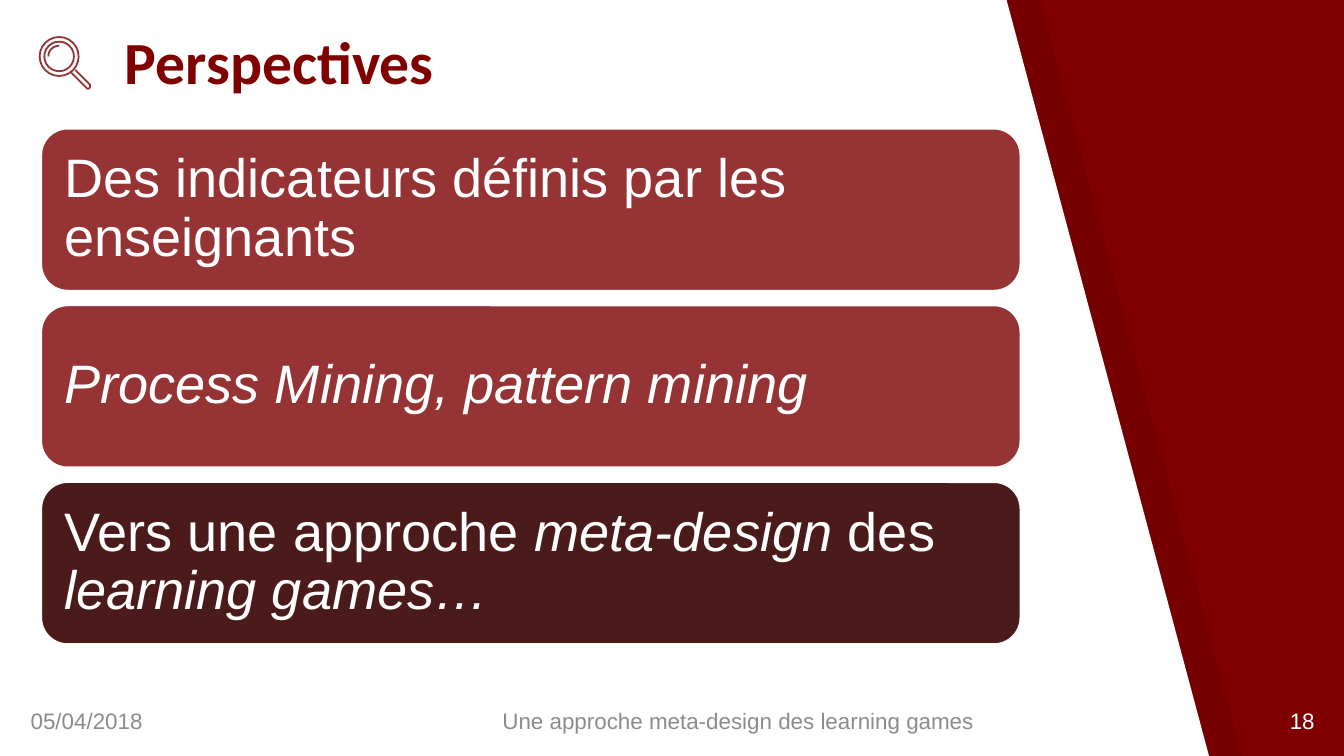
import math

import pptx
import pptx.dml.color
import pptx.enum.shapes
import pptx.enum.text
import pptx.oxml
import pptx.oxml.ns
import pptx.util

Inches = pptx.util.Inches
SHAPES = pptx.enum.shapes.MSO_SHAPE
ANCHOR = pptx.enum.text.MSO_ANCHOR
ALIGN = pptx.enum.text.PP_ALIGN

COLORS = {
    "maroon": "800000",
    "brick": "963334",
    "dark": "4B1A1A",
    "white": "FFFFFF",
    "grey": "8C8C8C",
    "black": "000000",
}

# Content: a run is (text, italic)
TITLE = "Perspectives"
PANELS = [
    ([("Des indicateurs définis par les enseignants", False)], "brick"),
    ([("Process Mining, pattern mining", True)], "brick"),
    ([("Vers une approche ", False), ("meta-design", True),
      (" des ", False), ("learning games…", True)], "dark"),
]
# Footer: text, left, width, colour, alignment
FOOTER = [
    ("05/04/2018", 0.13, 2.66, "grey", ALIGN.LEFT),
    ("Une approche meta-design des learning games", 3.64, 5.07, "grey", ALIGN.LEFT),
    ("18", 9.29, 0.59, "white", ALIGN.RIGHT),
]

# Layout, in inches
PANEL_LEFT, PANEL_TOP, PANEL_WIDTH, PANEL_HEIGHT = 0.3, 0.95, 7.3, 1.22
LAST_PANEL_TOP = 3.58
PANEL_STEP = (LAST_PANEL_TOP - PANEL_TOP) / (len(PANELS) - 1)
SHEET = [(0, -0.01), (0, 5.64), (9, 5.64), (7.49, 0)]
SHEET_SHADOW_OFFSET = 0.25
LENS_X, LENS_Y = 0.44, 0.42
LENS_RADII = (0.145, 0.11)
GLINT_RADIUS = 0.08
HANDLE = [(0.53, 0.54), (0.65, 0.66), (0.66, 0.66), (0.67, 0.65),
          (0.67, 0.63), (0.56, 0.52)]


def rgb(name):
    return pptx.dml.color.RGBColor.from_string(COLORS[name])


def paint(shape, fill=None, line=None, width=1):
    shape.shadow.inherit = False
    if fill:
        shape.fill.solid()
        shape.fill.fore_color.rgb = rgb(fill)
    else:
        shape.fill.background()
    if line:
        shape.line.color.rgb = rgb(line)
        shape.line.width = pptx.util.Pt(width)
    else:
        shape.line.fill.background()


def write(frame, text, size=12, font="Arial", color="white", bold=False,
          align=ALIGN.LEFT, anchor=ANCHOR.MIDDLE, inset=None, spacing=None):
    """Fill a text frame; text is a string or a list of (text, italic) runs."""
    frame.word_wrap = True
    frame.auto_size = pptx.enum.text.MSO_AUTO_SIZE.NONE
    frame.vertical_anchor = anchor
    if inset is not None:
        frame.margin_left = frame.margin_right = Inches(inset)
        frame.margin_top = frame.margin_bottom = Inches(inset)
    paragraph = frame.paragraphs[0]
    paragraph.alignment = align
    if spacing:
        paragraph.line_spacing = spacing
    for words, italic in [(text, False)] if isinstance(text, str) else text:
        run = paragraph.add_run()
        run.text = words
        run.font.name = font
        run.font.size = pptx.util.Pt(size)
        run.font.bold = bold
        run.font.italic = italic
        run.font.color.rgb = rgb(color)


def outline(shapes, points, close=False):
    corners = [(Inches(x), Inches(y)) for x, y in points]
    builder = shapes.build_freeform(*corners[0])
    builder.add_line_segments(corners[1:], close=close)
    return builder.convert_to_shape()


def main():
    deck = pptx.Presentation()
    deck.slide_width = Inches(10)
    deck.slide_height = deck.slide_width * 9 // 16
    layout = deck.slide_layouts[5]
    slide = deck.slides.add_slide(layout)
    slide.background.fill.solid()
    slide.background.fill.fore_color.rgb = rgb("maroon")

    # Slanted white sheet over its translucent shadow
    sheet_shadow = outline(
        slide.shapes, [(x + SHEET_SHADOW_OFFSET, y) for x, y in SHEET], close=True)
    paint(sheet_shadow, fill="black")
    shade = sheet_shadow.element.find(".//" + pptx.oxml.ns.qn("a:srgbClr"))
    shade.append(pptx.oxml.parse_xml(
        f'<a:alpha {pptx.oxml.ns.nsdecls("a")} val="7000"/>'))
    sheet = outline(slide.shapes, SHEET, close=True)
    paint(sheet, fill="white")
    # Both belong to the layout, behind everything on the slide
    for backdrop in (sheet_shadow, sheet):
        layout.shapes.element.append(backdrop.element)

    # Title
    title = slide.shapes.title
    title.left, title.top = Inches(0.83), Inches(0.29)
    title.width, title.height = Inches(6.14), Inches(0.53)
    write(title.text_frame, TITLE, size=32, font="Calibri", color="maroon",
          bold=True, anchor=ANCHOR.BOTTOM, inset=0.1)

    # Footer
    for text, left, width, color, align in FOOTER:
        note = slide.shapes.add_textbox(
            Inches(left), Inches(5.21), Inches(width), Inches(0.3))
        write(note.text_frame, text, color=color, align=align)

    # Perspective panels
    for row, (runs, fill) in enumerate(PANELS):
        panel = slide.shapes.add_shape(
            SHAPES.ROUNDED_RECTANGLE, Inches(PANEL_LEFT),
            Inches(PANEL_TOP + row * PANEL_STEP),
            Inches(PANEL_WIDTH), Inches(PANEL_HEIGHT))
        paint(panel, fill=fill, line="white", width=2)
        write(panel.text_frame, runs, size=29, inset=0.12, spacing=0.9)

    # Magnifying glass: two rings, a quarter-circle glint and a handle
    magnifier = slide.shapes.add_group_shape().shapes
    strokes = [
        magnifier.add_shape(SHAPES.OVAL, Inches(LENS_X - radius),
                            Inches(LENS_Y - radius),
                            Inches(2 * radius), Inches(2 * radius))
        for radius in LENS_RADII
    ]
    angles = [math.radians(degrees) for degrees in range(180, 271, 10)]
    glint = [(LENS_X + GLINT_RADIUS * math.cos(angle),
              LENS_Y + GLINT_RADIUS * math.sin(angle)) for angle in angles]
    strokes += [outline(magnifier, glint), outline(magnifier, HANDLE)]
    for stroke in strokes:
        paint(stroke, line="brick", width=0.96)

    deck.save("out.pptx")


if __name__ == "__main__":
    main()
